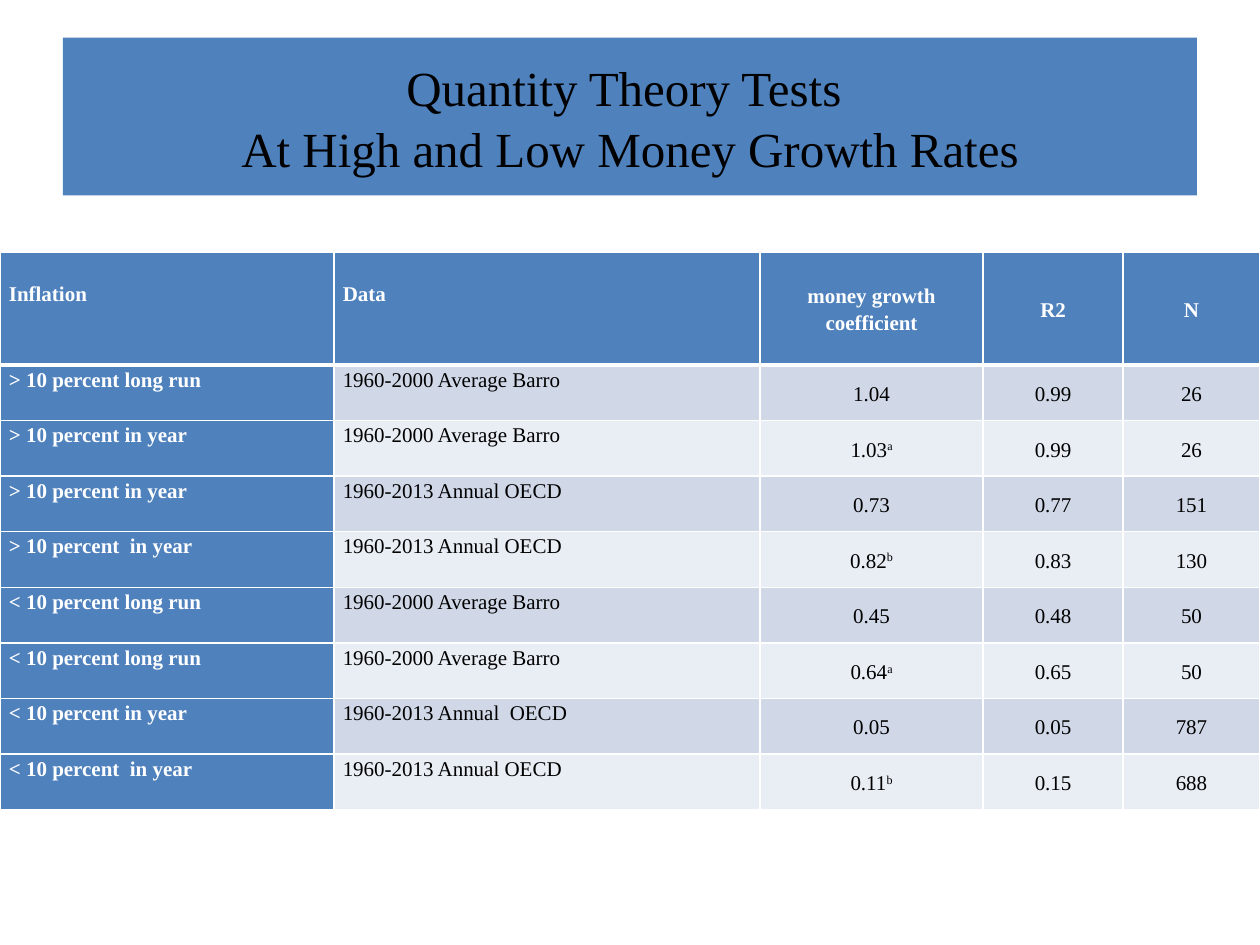
from dataclasses import dataclass

from lxml.etree import SubElement
from pptx import Presentation
from pptx.dml.color import RGBColor as RGB
from pptx.enum.shapes import MSO_SHAPE as Shape
from pptx.enum.text import MSO_ANCHOR as Anchor, PP_ALIGN as Align
from pptx.oxml.ns import qn
from pptx.util import Cm, Pt

TITLE = ("Quantity Theory Tests ", "At High and Low Money Growth Rates")
HEADER = ("Inflation", "Data", "money growth coefficient", "R2", "N")
# A coefficient is a value and, where it has one, its footnote mark.
RESULTS = [
    ("> 10 percent long run", "1960-2000 Average Barro", ("1.04",), "0.99", "26"),
    ("> 10 percent in year", "1960-2000 Average Barro", ("1.03", "a"), "0.99", "26"),
    ("> 10 percent in year", "1960-2013 Annual OECD", ("0.73",), "0.77", "151"),
    ("> 10 percent  in year", "1960-2013 Annual OECD", ("0.82", "b"), "0.83", "130"),
    ("< 10 percent long run", "1960-2000 Average Barro", ("0.45",), "0.48", "50"),
    ("< 10 percent long run", "1960-2000 Average Barro", ("0.64", "a"), "0.65", "50"),
    ("< 10 percent in year", "1960-2013 Annual  OECD", ("0.05",), "0.05", "787"),
    ("< 10 percent  in year", "1960-2013 Annual OECD", ("0.11", "b"), "0.15", "688"),
]
COLUMN_WIDTHS = (6.73, 8.59, 4.5, 2.82, 2.76)
HEADER_HEIGHT, RESULT_HEIGHT = 2.28, 1.12
TABLE_TOP = 5.08
LABEL_COLUMNS = 2  # left-aligned text columns, before the centred figures


@dataclass(frozen=True)
class Theme:
    font: str = "Times New Roman"
    accent: RGB = RGB(0x4F, 0x81, 0xBD)
    bands: tuple = (RGB(0xD0, 0xD8, 0xE8), RGB(0xE9, 0xED, 0xF4))
    dark: RGB = RGB(0, 0, 0)
    light: RGB = RGB(255, 255, 255)
    title_size: Pt = Pt(28)
    table_size: Pt = Pt(12)
    rule: Pt = Pt(1)
    header_rule: Pt = Pt(3)


THEME = Theme()


def add_run(paragraph, text, size, color, bold=False):
    run = paragraph.add_run()
    run.text = text
    font = run.font
    font.name, font.size, font.bold = THEME.font, size, bold
    font.color.rgb = color
    return run


def add_title(slide):
    banner = slide.shapes.add_shape(
        Shape.RECTANGLE, Cm(1.27), Cm(0.76), Cm(22.86), Cm(3.18))
    banner.shadow.inherit = False
    banner.fill.solid()
    banner.fill.fore_color.rgb = THEME.accent
    banner.line.fill.background()
    frame = banner.text_frame
    frame.word_wrap = True
    frame.vertical_anchor = Anchor.MIDDLE
    paragraph = frame.paragraphs[0]
    paragraph.alignment = Align.CENTER
    paragraph.line_spacing = 1.04
    for index, line in enumerate(TITLE):
        if index:
            paragraph.add_line_break()
        add_run(paragraph, line, THEME.title_size, THEME.dark)


def set_borders(cell, row):
    """Rule all four sides, heavier between the header and the results."""
    heavy_side = {0: "lnB", 1: "lnT"}.get(row)
    properties = cell._tc.get_or_add_tcPr()
    for side in ("lnL", "lnR", "lnT", "lnB"):
        width = THEME.header_rule if side == heavy_side else THEME.rule
        border = SubElement(properties, qn(f"a:{side}"), w=str(int(width)))
        fill = SubElement(border, qn("a:solidFill"))
        SubElement(fill, qn("a:srgbClr"), val=str(THEME.light))


def fill_cell(cell, content, row, column):
    is_label = column < LABEL_COLUMNS
    is_heading = row == 0 or column == 0
    set_borders(cell, row)
    cell.fill.solid()
    cell.fill.fore_color.rgb = (
        THEME.accent if is_heading else THEME.bands[(row - 1) % 2])
    cell.margin_left = cell.margin_right = Cm(0.18)
    cell.margin_top = Cm(0.56 if row == 0 and is_label else 0)
    cell.margin_bottom = Cm(0)
    cell.vertical_anchor = Anchor.TOP if is_label else Anchor.MIDDLE

    paragraph = cell.text_frame.paragraphs[0]
    paragraph.alignment = Align.LEFT if is_label else Align.CENTER
    paragraph.line_spacing = 1.15
    color = THEME.light if is_heading else THEME.dark
    value, *marks = (content,) if isinstance(content, str) else content
    add_run(paragraph, value, THEME.table_size, color, is_heading)
    for mark in marks:
        run = add_run(paragraph, mark, THEME.table_size, color, is_heading)
        run._r.get_or_add_rPr().set("baseline", "30000")


def add_results(slide):
    rows = [HEADER, *RESULTS]
    heights = [HEADER_HEIGHT] + [RESULT_HEIGHT] * len(RESULTS)
    table = slide.shapes.add_table(
        len(rows), len(HEADER), Cm(0), Cm(TABLE_TOP),
        Cm(sum(COLUMN_WIDTHS)), Cm(sum(heights))).table
    table.horz_banding = False
    for column, width in zip(table.columns, COLUMN_WIDTHS):
        column.width = Cm(width)
    for row, (contents, height) in enumerate(zip(rows, heights)):
        table.rows[row].height = Cm(height)
        for column, content in enumerate(contents):
            fill_cell(table.cell(row, column), content, row, column)


def main():
    deck = Presentation()
    deck.slide_width, deck.slide_height = Cm(25.4), Cm(19.05)
    slide = deck.slides.add_slide(deck.slide_layouts[6])
    add_title(slide)
    add_results(slide)
    deck.save("out.pptx")


if __name__ == "__main__":
    main()
